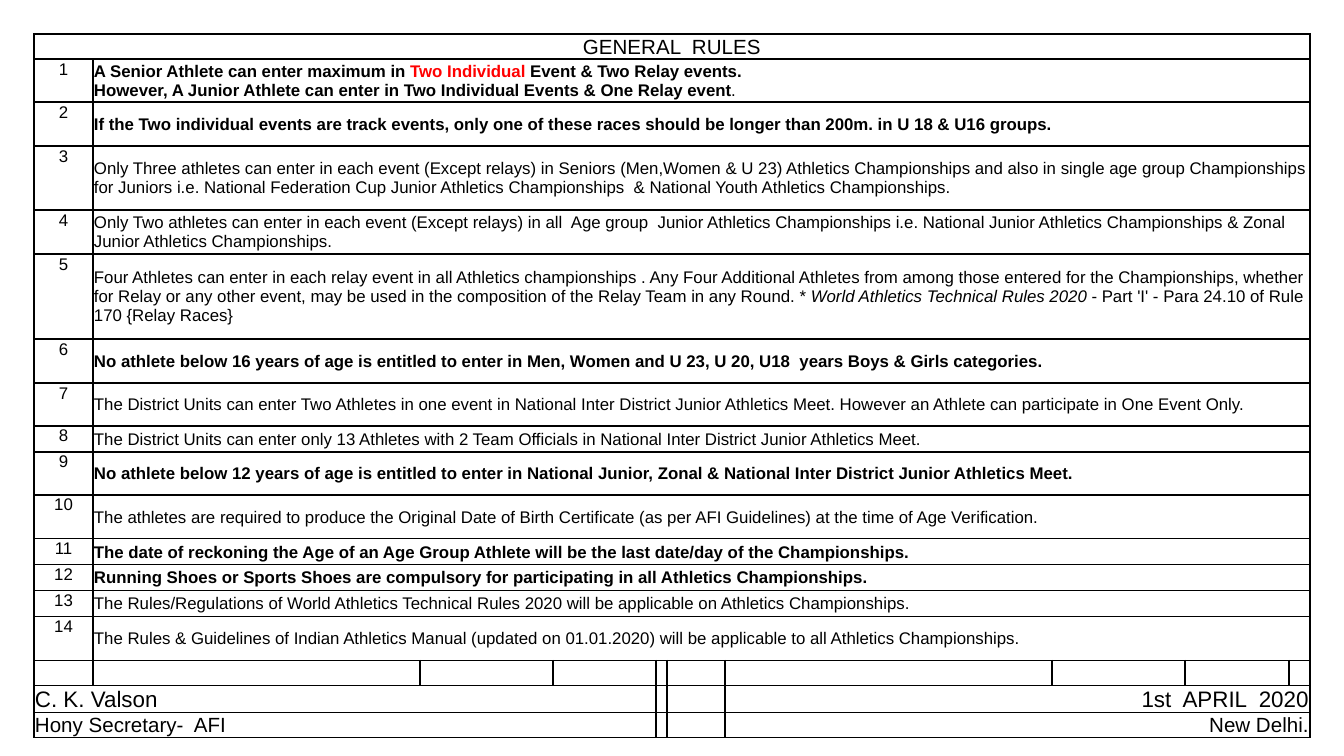
from dataclasses import dataclass

from lxml import etree
from pptx import Presentation
from pptx.dml.color import RGBColor
from pptx.enum.text import MSO_ANCHOR, PP_ALIGN
from pptx.oxml.ns import qn
from pptx.util import Emu, Pt

LEFT, CENTER, RIGHT = PP_ALIGN.LEFT, PP_ALIGN.CENTER, PP_ALIGN.RIGHT
TOP, MIDDLE, BOTTOM = MSO_ANCHOR.TOP, MSO_ANCHOR.MIDDLE, MSO_ANCHOR.BOTTOM

EMU_PER_PX = 6804
FONT = "Arial"
BLACK, RED = "000000", "FF0000"
RULE_SIZE = 9

TABLE_LEFT, TABLE_TOP = 34, 34
COLUMN_WIDTHS = [59, 327, 133, 103, 11, 58, 327, 133, 104, 21]
TITLE_HEIGHT, SPACER_HEIGHT = 25, 25
LAST_COLUMN = len(COLUMN_WIDTHS) - 1


@dataclass
class Piece:
    text: str
    bold: bool = False
    italic: bool = False
    color: str = BLACK


@dataclass
class Rule:
    height: int
    lines: list[list[Piece]]


@dataclass
class SignatureRow:
    height: int
    size: int
    signer: str
    place_or_date: str


def plain(height: int, text: str) -> Rule:
    return Rule(height, [[Piece(text)]])


def bold(height: int, text: str) -> Rule:
    return Rule(height, [[Piece(text, bold=True)]])


RULES = [
    Rule(43, [
        [Piece("A Senior Athlete can enter maximum in ", bold=True),
         Piece("Two Individual ", bold=True, color=RED),
         Piece("Event & Two Relay events.", bold=True)],
        [Piece("However, A Junior Athlete can enter in Two Individual Events & One Relay event", bold=True),
         Piece(".")],
    ]),
    bold(44, "If the Two individual events are track events, only one of these races "
             "should be longer than 200m. in U 18 & U16 groups."),
    plain(64, "Only Three athletes can enter in each event (Except relays) in Seniors "
              "(Men,Women & U 23) Athletics Championships and also in single age group "
              "Championships for Juniors i.e. National Federation Cup Junior Athletics "
              "Championships  & National Youth Athletics Championships."),
    plain(44, "Only Two athletes can enter in each event (Except relays) in all  Age group  "
              "Junior Athletics Championships i.e. National Junior Athletics Championships "
              "& Zonal Junior Athletics Championships."),
    Rule(85, [
        [Piece("Four Athletes can enter in each relay event in all Athletics championships . "
               "Any Four Additional Athletes from among those entered for the Championships, "
               "whether for Relay or any other event, may be used in the composition of the "
               "Relay Team in any Round. * "),
         Piece("World Athletics Technical Rules 2020", italic=True),
         Piece(" - Part 'I' - Para 24.10 of Rule 170 {Relay Races}")],
    ]),
    bold(44, "No athlete below 16 years of age is entitled to enter in Men, Women and "
             "U 23, U 20, U18  years Boys & Girls categories."),
    plain(43, "The District Units can enter Two Athletes in one event in National Inter "
              "District Junior Athletics Meet. However an Athlete can participate in One Event Only."),
    plain(26, "The District Units can enter only 13 Athletes with 2 Team Officials in "
              "National Inter District Junior Athletics Meet."),
    bold(43, "No athlete below 12 years of age is entitled to enter in National Junior, "
             "Zonal & National Inter District Junior Athletics Meet."),
    plain(44, "The athletes are required to produce the Original Date of Birth Certificate "
              "(as per AFI Guidelines) at the time of Age Verification."),
    bold(26, "The date of reckoning the Age of an Age Group Athlete will be the last "
             "date/day of the Championships."),
    bold(26, "Running Shoes or Sports Shoes are compulsory for participating in all "
             "Athletics Championships."),
    plain(26, "The Rules/Regulations of World Athletics Technical Rules 2020 will be "
              "applicable on Athletics Championships."),
    plain(44, "The Rules & Guidelines of Indian Athletics Manual (updated on 01.01.2020) "
              "will be applicable to all Athletics Championships."),
]

SIGNATURES = [
    SignatureRow(27, 12, "C. K. Valson", "1st  APRIL  2020"),
    SignatureRow(25, 11, "Hony Secretary-  AFI", " New Delhi."),
]


def px(length: int) -> Emu:
    return Emu(length * EMU_PER_PX)


def rgb(color: str) -> RGBColor:
    return RGBColor.from_string(color)


def style_cell(cell) -> None:
    """Clear the fill, tighten the margins and frame the cell in black."""
    cell.fill.background()
    cell.margin_left = cell.margin_right = cell.margin_top = px(1)
    cell.margin_bottom = 0
    properties = cell._tc.get_or_add_tcPr()
    for position, side in enumerate(("lnL", "lnR", "lnT", "lnB")):
        border = etree.Element(qn(f"a:{side}"), w=str(Pt(1)))
        fill = etree.SubElement(border, qn("a:solidFill"))
        etree.SubElement(fill, qn("a:srgbClr"), val=BLACK)
        properties.insert(position, border)
    # Keeps empty cells from stretching their row
    paragraph = cell.text_frame.paragraphs[0]._p
    etree.SubElement(paragraph, qn("a:endParaRPr"), sz=str(RULE_SIZE * 100))


def write_cell(cell, lines: list[list[Piece]], size: int, align, anchor) -> None:
    cell.vertical_anchor = anchor
    frame = cell.text_frame
    for index, pieces in enumerate(lines):
        paragraph = frame.add_paragraph() if index else frame.paragraphs[0]
        paragraph.alignment = align
        for piece in pieces:
            run = paragraph.add_run()
            run.text = piece.text
            run.font.name = FONT
            run.font.size = Pt(size)
            run.font.bold = piece.bold
            run.font.italic = piece.italic
            run.font.color.rgb = rgb(piece.color)


def write_span(table, row: int, first: int, last: int, lines: list[list[Piece]],
               size: int, align, anchor) -> None:
    table.cell(row, first).merge(table.cell(row, last))
    write_cell(table.cell(row, first), lines, size, align, anchor)


def main() -> None:
    deck = Presentation()
    deck.slide_width, deck.slide_height = px(1344), px(756)
    slide = deck.slides.add_slide(deck.slide_layouts[6])

    # Empty grid
    heights = [TITLE_HEIGHT, *(rule.height for rule in RULES), SPACER_HEIGHT,
               *(signature.height for signature in SIGNATURES)]
    table = slide.shapes.add_table(
        len(heights), len(COLUMN_WIDTHS), px(TABLE_LEFT), px(TABLE_TOP),
        px(sum(COLUMN_WIDTHS)), px(sum(heights))).table
    table.first_row = table.horz_banding = False
    for column, width in zip(table.columns, COLUMN_WIDTHS):
        column.width = px(width)
    for row, height in zip(table.rows, heights):
        row.height = px(height)
        for cell in row.cells:
            style_cell(cell)

    # Title
    write_span(table, 0, 0, LAST_COLUMN, [[Piece("GENERAL  RULES")]], 11, CENTER, BOTTOM)

    # Numbered rules
    for number, rule in enumerate(RULES, start=1):
        write_cell(table.cell(number, 0), [[Piece(str(number))]], RULE_SIZE, CENTER, TOP)
        write_span(table, number, 1, LAST_COLUMN, rule.lines, RULE_SIZE, LEFT, MIDDLE)

    # Signature, date and place
    for row, signature in enumerate(SIGNATURES, start=len(RULES) + 2):
        write_span(table, row, 0, 3, [[Piece(signature.signer)]],
                   signature.size, LEFT, MIDDLE)
        write_span(table, row, 6, LAST_COLUMN, [[Piece(signature.place_or_date)]],
                   signature.size, RIGHT, MIDDLE)

    deck.save("out.pptx")


if __name__ == "__main__":
    main()
